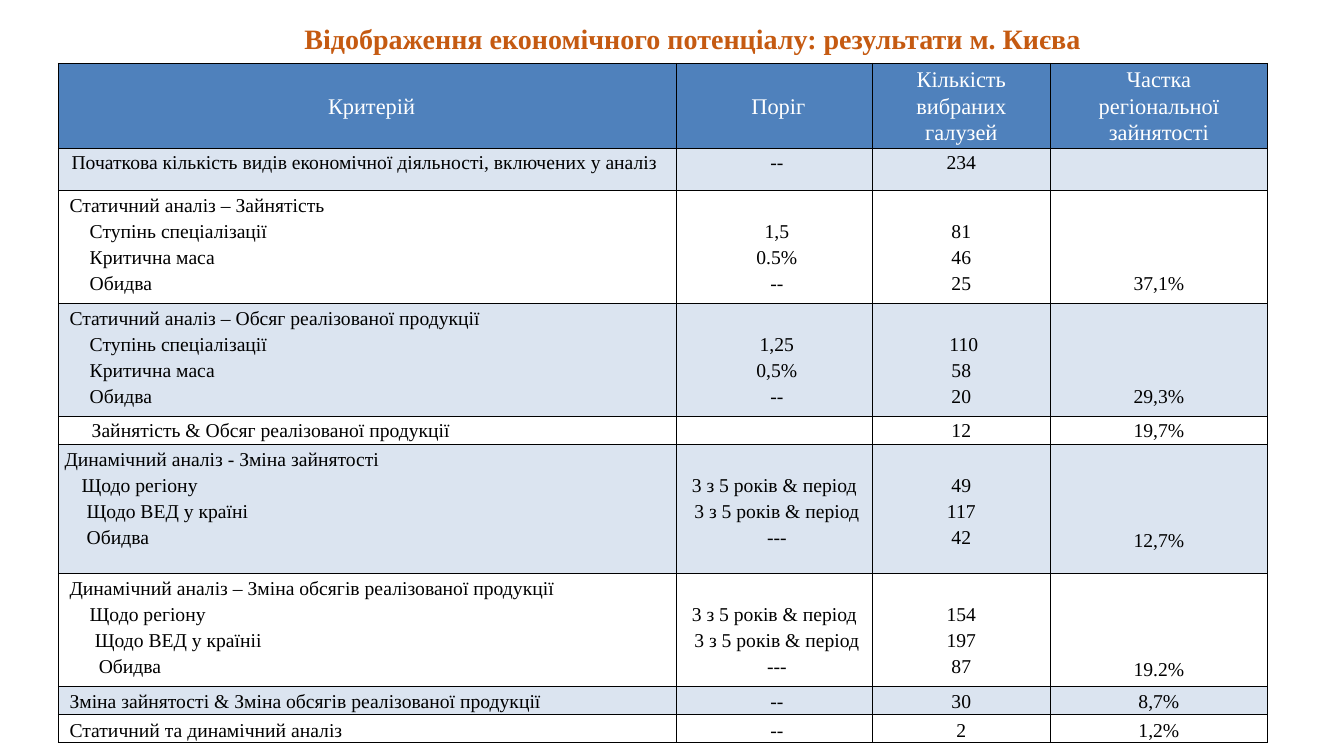
"""Build a slide with the table of Kyiv's economic potential results."""
from dataclasses import dataclass

from lxml import etree
from pptx import Presentation
from pptx.dml.color import RGBColor
from pptx.enum.text import MSO_ANCHOR, MSO_AUTO_SIZE, PP_ALIGN
from pptx.oxml.ns import qn
from pptx.util import Inches, Pt

LEFT, CENTER = PP_ALIGN.LEFT, PP_ALIGN.CENTER
TOP, MIDDLE = MSO_ANCHOR.TOP, MSO_ANCHOR.MIDDLE
NO_AUTOSIZE = MSO_AUTO_SIZE.NONE

TITLE = "Відображення економічного потенціалу: результати м. Києва"
HEADERS = [
    ("Критерій", 0.06),
    ("Поріг", 0.06),
    ("Кількість вибраних галузей", 0.24),
    ("Частка регіональної зайнятості", 0.22),
]
PERIOD = "3 з 5 років & період"

# Each body row: height, criteria, thresholds, counts, share, lines above the share.
ROWS = [
    (0.42, [("Початкова кількість видів економічної діяльності, включених у аналіз", 0.07)],
     [("--", 0.05)], [("234", 0)], "", 0),
    (1.12, [("Статичний аналіз – Зайнятість", 0.05), ("Ступінь спеціалізації", 0.25),
            ("Критична маса", 0.25), ("Обидва", 0.25)],
     [("1,5", 0.05), ("0.5%", 0.05), ("--", 0.05)],
     [("81", 0), ("46", 0), ("25", 0)], "37,1%", 3),
    (1.12, [("Статичний аналіз – Обсяг реалізованої продукції", 0.05),
            ("Ступінь спеціалізації", 0.25), ("Критична маса", 0.25), ("Обидва", 0.25)],
     [("1,25", 0.05), ("0,5%", 0.05), ("--", 0.05)],
     [("110", 0.05), ("58", 0), ("20", 0)], "29,3%", 3),
    (0.28, [("Зайнятість & Обсяг реалізованої продукції", 0.27)],
     [("", 0)], [("12", 0)], "19,7%", 0),
    (1.28, [("Динамічний аналіз - Зміна зайнятості", 0), ("Щодо регіону", 0.17),
            ("Щодо ВЕД у країні", 0.22), ("Обидва", 0.22)],
     [(PERIOD, 0), (PERIOD, 0.05), ("---", 0.05)],
     [("49", 0), ("117", 0), ("42", 0)], "12,7%", 3.1),
    (1.12, [("Динамічний аналіз – Зміна обсягів реалізованої продукції", 0.05),
            ("Щодо регіону", 0.25), ("Щодо ВЕД у країніі", 0.3), ("Обидва", 0.34)],
     [(PERIOD, 0), (PERIOD, 0.05), ("---", 0.05)],
     [("154", 0), ("197", 0), ("87", 0)], "19.2%", 3.1),
    (0.28, [("Зміна зайнятості & Зміна обсягів реалізованої продукції", 0.05)],
     [("--", 0.05)], [("30", 0)], "8,7%", 0),
    (0.28, [("Статичний та динамічний аналіз", 0.05)],
     [("--", 0.05)], [("2", 0)], "1,2%", 0),
]
COLUMN_WIDTHS = [6.13, 1.94, 1.77, 2.15]
HEADER_HEIGHT = 0.84
LINE_HEIGHT = 0.26
CELL_INSET = 0.06


@dataclass(frozen=True)
class Theme:
    """Hold the colours, font and type sizes."""
    font: str = "Times New Roman"
    accent: RGBColor = RGBColor(0xC5, 0x5A, 0x11)
    header: RGBColor = RGBColor(0x4F, 0x81, 0xBC)
    band: RGBColor = RGBColor(0xDB, 0xE4, 0xF0)
    white: RGBColor = RGBColor(0xFF, 0xFF, 0xFF)
    black: RGBColor = RGBColor(0, 0, 0)
    title_size: int = 20
    header_size: int = 16
    body_size: int = 14
    border_width: int = 1


THEME = Theme()


def write_line(para, text, size, color, align, spacing, left=0, bold=False):
    """Fill one paragraph with a formatted run."""
    para.alignment = align
    para.line_spacing = spacing
    properties = para._p.get_or_add_pPr()
    properties.set("marL", str(Inches(left)))
    properties.set("indent", "0")
    if text:
        span = para.add_run()
        span.text = text
        span.font.name = THEME.font
        span.font.size = Pt(size)
        span.font.bold = bold
        span.font.color.rgb = color
    else:
        etree.SubElement(para._p, qn("a:endParaRPr"), sz=str(size * 100))


def add_borders(cell):
    """Draw a solid line on all four sides of a cell."""
    properties = cell._tc.get_or_add_tcPr()
    for side in ("lnL", "lnR", "lnT", "lnB"):
        line = etree.SubElement(properties, qn(f"a:{side}"), w=str(Pt(THEME.border_width)))
        fill = etree.SubElement(line, qn("a:solidFill"))
        etree.SubElement(fill, qn("a:srgbClr"), val=str(THEME.black))


def fill_cell(cell, lines, size, color, align, spacing, fill, anchor=TOP,
              inset=CELL_INSET, lines_above=0):
    """Format a cell and write its lines."""
    add_borders(cell)
    if fill is None:
        cell.fill.background()
    else:
        cell.fill.solid()
        cell.fill.fore_color.rgb = fill
    cell.vertical_anchor = anchor
    cell.margin_left = cell.margin_right = Inches(inset)
    cell.margin_top = Inches(lines_above * LINE_HEIGHT)
    cell.margin_bottom = 0
    frame = cell.text_frame
    for index, (text, left) in enumerate(lines):
        para = frame.add_paragraph() if index else frame.paragraphs[0]
        write_line(para, text, size, color, align, spacing, left)


def add_title(page):
    """Place the heading in the title placeholder."""
    box = page.shapes.title
    box.left, box.top, box.width, box.height = map(Inches, (1.27, 0.14, 10.61, 0.7))
    frame = box.text_frame
    frame.word_wrap = True
    frame.auto_size = NO_AUTOSIZE
    frame.vertical_anchor = TOP
    frame.margin_left = Inches(0.69)
    write_line(frame.paragraphs[0], TITLE, THEME.title_size, THEME.accent, CENTER, 1.07, bold=True)


def add_results(page):
    """Add the results table."""
    heights = [HEADER_HEIGHT] + [row[0] for row in ROWS]
    table = page.shapes.add_table(
        len(heights), len(COLUMN_WIDTHS), Inches(0.58), Inches(0.63),
        Inches(sum(COLUMN_WIDTHS)), Inches(sum(heights))).table
    table.first_row = table.horz_banding = False
    for column, width in zip(table.columns, COLUMN_WIDTHS):
        column.width = Inches(width)
    for row, height in zip(table.rows, heights):
        row.height = Inches(height)
    for index, (text, inset) in enumerate(HEADERS):
        left = 0.08 if inset == CELL_INSET else 0
        fill_cell(table.cell(0, index), [(text, left)], THEME.header_size, THEME.white,
                  CENTER, 1.05, THEME.header, MIDDLE, inset)
    for number, (_, criteria, thresholds, counts, share, above) in enumerate(ROWS, 1):
        fill = THEME.band if number % 2 else None
        anchor = MIDDLE if number == len(ROWS) else TOP
        heading = 1 if len(criteria) > 1 else 0
        cells = [(criteria, LEFT, 0), (thresholds, CENTER, heading),
                 (counts, CENTER, heading), ([(share, 0)], CENTER, above)]
        for index, (lines, align, lines_above) in enumerate(cells):
            fill_cell(table.cell(number, index), lines, THEME.body_size, THEME.black,
                      align, 1.2, fill, anchor, lines_above=lines_above)


def main():
    """Build and save the deck."""
    deck = Presentation()
    deck.slide_width, deck.slide_height = Inches(13.33), Inches(7.5)
    page = deck.slides.add_slide(deck.slide_layouts.get_by_name("Title Only"))
    add_title(page)
    add_results(page)
    deck.save("out.pptx")


if __name__ == "__main__":
    main()
